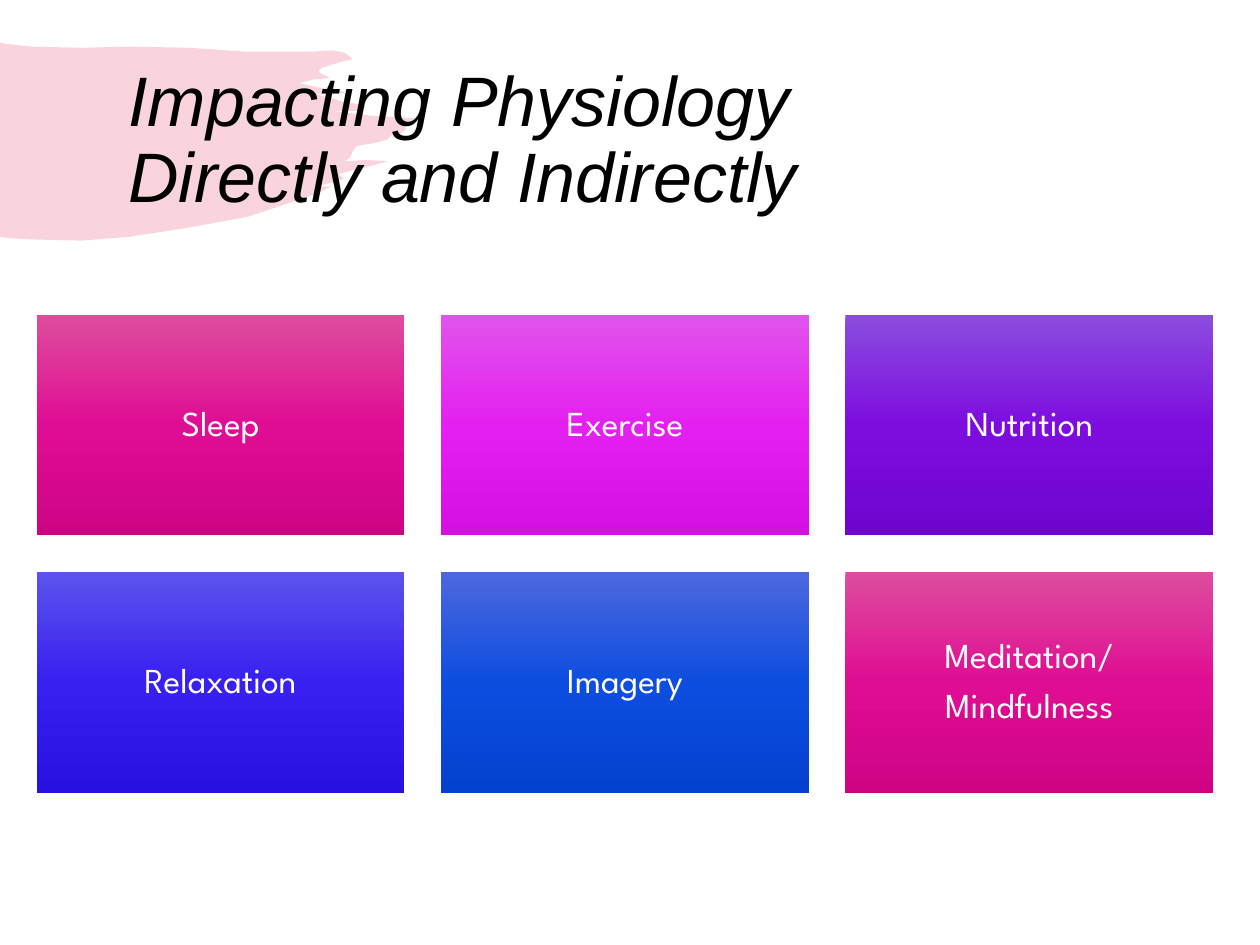
from copy import deepcopy

from lxml import etree
from pptx import Presentation
from pptx.dml.color import RGBColor
from pptx.enum.shapes import MSO_SHAPE
from pptx.enum.text import MSO_ANCHOR, MSO_AUTO_SIZE, PP_ALIGN
from pptx.oxml.ns import qn
from pptx.util import Pt

PX = 9144
RECTANGLE = MSO_SHAPE.RECTANGLE
MIDDLE = MSO_ANCHOR.MIDDLE
NO_AUTOFIT = MSO_AUTO_SIZE.NONE
LEFT, CENTER = PP_ALIGN.LEFT, PP_ALIGN.CENTER

COLORS = {
    "brush": "E72953",
    "title": "000000",
    "label": "FFFFFF",
    "pink": ("DE4D9D", "DF0D93", "CE0485"),
    "magenta": ("E153EC", "E420F0", "D411E0"),
    "purple": ("8B4DDE", "7D0DDF", "6F04CE"),
    "indigo": ("5D53EC", "3720F0", "2811E0"),
    "blue": ("4D68DE", "0D4DDF", "0441CE"),
}
TOPICS = [
    ("Sleep", "pink"), ("Exercise", "magenta"), ("Nutrition", "purple"),
    ("Relaxation", "indigo"), ("Imagery", "blue"),
    ("Meditation/\nMindfulness", "pink"),
]
BRUSH_OUTLINE = [
    (0, 0), (6, 1), (25, 3), (66, 4), (102, 3), (151, 4), (194, 7), (248, 7),
    (264, 6), (274, 8), (280, 13), (271, 15), (255, 20), (253, 23), (256, 25),
    (262, 28), (250, 29), (238, 32), (246, 34), (256, 36), (266, 37), (275, 40),
    (251, 41), (263, 44), (273, 47), (280, 48), (288, 49), (290, 51), (287, 54),
    (284, 54), (263, 54), (296, 58), (330, 60), (325, 62), (321, 63), (322, 69),
    (318, 72), (311, 73), (307, 77), (300, 79), (283, 82), (280, 86), (278, 91),
    (274, 94), (291, 93), (308, 94), (289, 99), (269, 104), (273, 108),
    (252, 114), (263, 114), (253, 119), (233, 126), (197, 138), (148, 147),
    (102, 154), (65, 157), (23, 156), (7, 155), (0, 154),
]


def style_runs(paragraph, font_name, size, color, italic=False):
    """Format every run of a paragraph."""
    for run in paragraph.runs:
        run.font.name = font_name
        run.font.size = Pt(size)
        run.font.italic = italic
        run.font.color.rgb = RGBColor.from_string(COLORS[color])


def add_brush(slide, left, top):
    """Draw the translucent brush stroke from its top left corner."""
    outline = [((left + x) * PX, (top + y) * PX) for x, y in BRUSH_OUTLINE]
    builder = slide.shapes.build_freeform(*outline[0])
    builder.add_line_segments(outline[1:], close=True)
    brush = builder.convert_to_shape()
    brush.shadow.inherit = False
    brush.line.fill.background()
    brush.fill.solid()
    brush.fill.fore_color.rgb = RGBColor.from_string(COLORS["brush"])
    tint = next(brush.fill._xPr.iter(qn("a:srgbClr")))
    etree.SubElement(tint, qn("a:alpha")).set("val", "20000")


def add_title(slide, left, top, width, height):
    """Place the slide title in the given box."""
    title = slide.shapes.title
    title.left, title.top = left * PX, top * PX
    title.width, title.height = width * PX, height * PX
    frame = title.text_frame
    frame.text = "Impacting Physiology \vDirectly and Indirectly"
    frame.auto_size = NO_AUTOFIT
    frame.vertical_anchor = MIDDLE
    heading = frame.paragraphs[0]
    heading.alignment = LEFT
    heading.line_spacing = 0.9
    style_runs(heading, "Arial", 40, "title", italic=True)


def fill_gradient(card, shades):
    """Fill a card from top to bottom with three evenly spaced shades."""
    card.fill.gradient()
    card.fill.gradient_angle = 270
    first_stop = next(card._element.spPr.iter(qn("a:gs")))
    first_stop.addnext(deepcopy(first_stop))
    for index, (stop, shade) in enumerate(zip(card.fill.gradient_stops, shades)):
        stop.position = index / 2
        stop.color.rgb = RGBColor.from_string(shade)


def add_card(slide, topic, hue, left, top, width, height):
    """Add one topic card with a centred label."""
    card = slide.shapes.add_shape(
        RECTANGLE, left * PX, top * PX, width * PX, height * PX)
    card.shadow.inherit = False
    card.line.fill.background()
    fill_gradient(card, COLORS[hue])
    frame = card.text_frame
    frame.text = topic
    frame.word_wrap = True
    frame.vertical_anchor = MIDDLE
    frame.margin_left = frame.margin_right = 8 * PX
    frame.margin_top = frame.margin_bottom = 8 * PX
    for label in frame.paragraphs:
        label.alignment = CENTER
        label.line_spacing = 0.9
        label.space_after = Pt(7)
        style_runs(label, "League Spartan", 20, "label")


def add_card_grid(slide, left, top, width, height, columns=3, rows=2, gap=29):
    """Lay out the topic cards in a grid that fills the given box."""
    card_width = (width - (columns - 1) * gap) // columns
    card_height = (height - (rows - 1) * gap) // rows
    for index, (topic, hue) in enumerate(TOPICS):
        row, column = divmod(index, columns)
        add_card(slide, topic, hue,
                 left + column * (card_width + gap),
                 top + row * (card_height + gap),
                 card_width, card_height)


def main():
    """Build and save the slide."""
    deck = Presentation()
    deck.slide_width, deck.slide_height = 1000 * PX, 750 * PX
    slide = deck.slides.add_slide(deck.slide_layouts[5])
    add_brush(slide, 0, 34)
    title = slide.shapes.title._element
    title.getparent().append(title)
    add_title(slide, 92, 40, 871, 145)
    add_card_grid(slide, 29, 250, 934, 379)
    deck.save("out.pptx")


if __name__ == "__main__":
    main()
